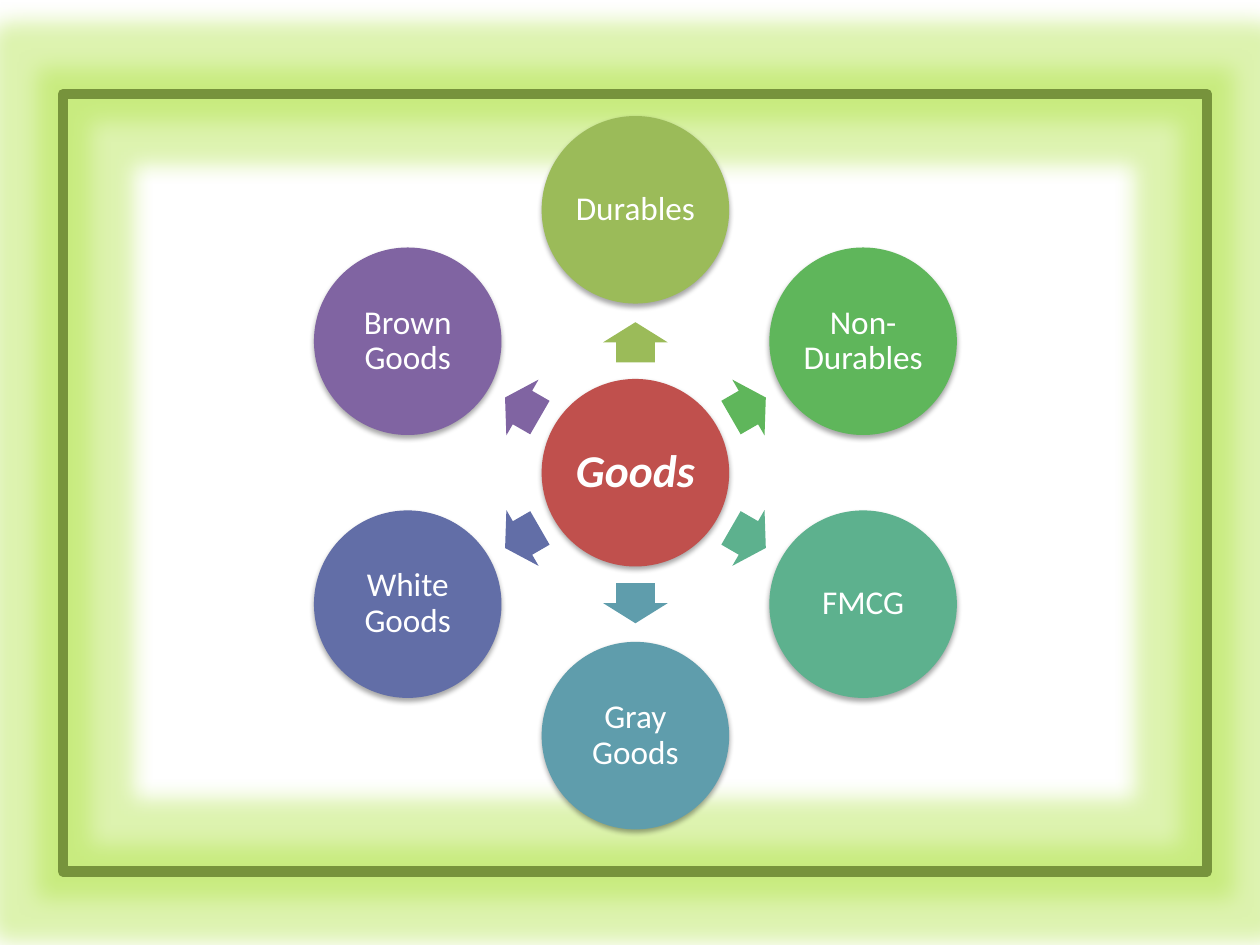
import math
from dataclasses import dataclass

import lxml.etree
import pptx
import pptx.dml.color
import pptx.enum.shapes
import pptx.enum.text
import pptx.oxml.ns
import pptx.util

Cm = pptx.util.Cm
Pt = pptx.util.Pt
RGBColor = pptx.dml.color.RGBColor
ShapeType = pptx.enum.shapes.MSO_SHAPE
qn = pptx.oxml.ns.qn

WHITE = RGBColor(0xFF, 0xFF, 0xFF)
BLACK = RGBColor(0x00, 0x00, 0x00)
FRAME_GREEN = RGBColor(0x77, 0x93, 0x3C)
GLOW_GREEN = RGBColor(0xAA, 0xE1, 0x39)
RED = RGBColor(0xC0, 0x50, 0x4D)
OLIVE = RGBColor(0x9B, 0xBB, 0x59)
GREEN = RGBColor(0x5F, 0xB6, 0x5B)
MINT = RGBColor(0x5D, 0xB1, 0x8E)
TEAL = RGBColor(0x5F, 0x9D, 0xAC)
INDIGO = RGBColor(0x62, 0x6E, 0xA7)
PURPLE = RGBColor(0x80, 0x64, 0xA2)

CENTER_X, CENTER_Y = 12.81, 9.53
CIRCLE_SIZE = 3.78
CIRCLE_ORBIT = 5.3
ARROW_ORBIT = 2.63
ARROW_LENGTH, ARROW_WIDTH = 0.81, 1.3


@dataclass
class Goods:
    label: str
    color: RGBColor


CATEGORIES = [
    Goods("Durables", OLIVE),
    Goods("Non-Durables", GREEN),
    Goods("FMCG", MINT),
    Goods("Gray Goods", TEAL),
    Goods("White Goods", INDIGO),
    Goods("Brown Goods", PURPLE),
]


def add_effect(shape, kind: str, color: RGBColor, alpha: int, **settings: int) -> None:
    shape.shadow.inherit = False
    effects = shape._element.spPr.find(qn("a:effectLst"))
    effect = lxml.etree.SubElement(effects, qn(f"a:{kind}"))
    for name, value in settings.items():
        effect.set(name, str(value))
    tint = lxml.etree.SubElement(effect, qn("a:srgbClr"), val=str(color))
    lxml.etree.SubElement(tint, qn("a:alpha"), val=str(alpha * 1000))


def add_centered(page, kind, x: float, y: float, width: float, height: float, color: RGBColor):
    shape = page.shapes.add_shape(
        kind, Cm(x - width / 2), Cm(y - height / 2), Cm(width), Cm(height)
    )
    shape.fill.solid()
    shape.fill.fore_color.rgb = color
    shape.line.fill.background()
    shape.shadow.inherit = False
    return shape


def add_frame(page) -> None:
    frame = page.shapes.add_shape(
        ShapeType.RECTANGLE, Cm(1.27), Cm(1.9), Cm(23.06), Cm(15.67)
    )
    frame.fill.background()
    frame.line.color.rgb = FRAME_GREEN
    frame.line.width = Pt(6)
    lxml.etree.SubElement(frame.line._ln, qn("a:round"))
    add_effect(frame, "glow", GLOW_GREEN, 40, rad=Pt(26))


def add_circle(page, goods: Goods, x: float, y: float, size: int = 19, strong: bool = False) -> None:
    circle = add_centered(page, ShapeType.OVAL, x, y, CIRCLE_SIZE, CIRCLE_SIZE, goods.color)
    add_effect(
        circle, "outerShdw", BLACK, 35,
        blurRad=Pt(3.1), dist=Pt(1.8), dir=90 * 60000, rotWithShape=0,
    )
    frame = circle.text_frame
    frame.text = goods.label
    frame.word_wrap = True
    frame.vertical_anchor = pptx.enum.text.MSO_ANCHOR.MIDDLE
    frame.margin_left = frame.margin_right = Cm(0.08)
    frame.margin_top = frame.margin_bottom = Cm(0.08)
    para = frame.paragraphs[0]
    para.alignment = pptx.enum.text.PP_ALIGN.CENTER
    para.line_spacing = 0.9
    font = para.runs[0].font
    font.name = "Calibri"
    font.size = Pt(size)
    font.bold = font.italic = strong
    font.color.rgb = WHITE


def add_arrow(page, x: float, y: float, degrees: float, color: RGBColor) -> None:
    arrow = add_centered(page, ShapeType.RIGHT_ARROW, x, y, ARROW_LENGTH, ARROW_WIDTH, color)
    arrow.adjustments[0] = 0.6
    arrow.adjustments[1] = 0.5
    arrow.rotation = degrees % 360


def orbit(radius: float, degrees: float) -> tuple[float, float]:
    angle = math.radians(degrees)
    return CENTER_X + radius * math.cos(angle), CENTER_Y + radius * math.sin(angle)


def main() -> None:
    deck = pptx.Presentation()
    deck.slide_width = Cm(25.4)
    deck.slide_height = Cm(19.05)
    page = deck.slides.add_slide(deck.slide_layouts[6])

    add_frame(page)
    add_circle(page, Goods("Goods", RED), CENTER_X, CENTER_Y, 26, True)
    for index, goods in enumerate(CATEGORIES):
        degrees = -90 + index * 360 / len(CATEGORIES)
        add_arrow(page, *orbit(ARROW_ORBIT, degrees), degrees, goods.color)
        add_circle(page, goods, *orbit(CIRCLE_ORBIT, degrees))

    deck.save("out.pptx")


if __name__ == "__main__":
    main()
